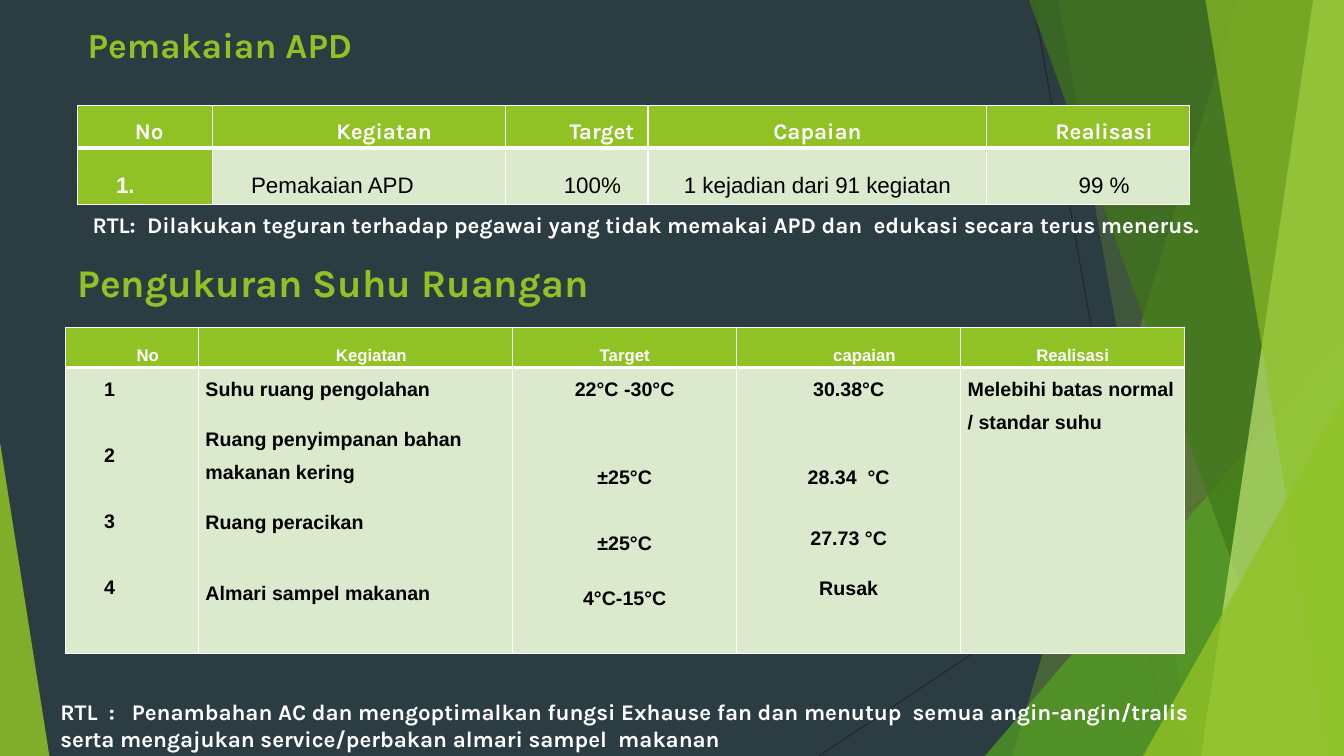
from dataclasses import dataclass
from typing import Any

import pptx
import pptx.dml.color
import pptx.enum.shapes
import pptx.enum.text
import pptx.oxml
import pptx.oxml.ns
import pptx.util

Pt = pptx.util.Pt
RGBColor = pptx.dml.color.RGBColor
Align = pptx.enum.text.PP_ALIGN
LEFT, MID = Align.LEFT, Align.CENTER

DARK = RGBColor(0x2C, 0x3C, 0x43)
LINE = RGBColor(0x26, 0x26, 0x26)
LIME = RGBColor(0x90, 0xC2, 0x26)
LEAF = RGBColor(0x54, 0xA0, 0x21)
MOSS = RGBColor(0x3F, 0x78, 0x19)
PALE = RGBColor(0xC0, 0xE4, 0x74)
MINT = RGBColor(0xDB, 0xE9, 0xCD)
WHITE = RGBColor(0xFF, 0xFF, 0xFF)
BLACK = RGBColor(0, 0, 0)

WIDE, HIGH = 960, 540


@dataclass
class Band:
    """Panel from a slanted left edge to the right side of the slide."""
    top: float
    foot: float
    color: RGBColor
    alpha: int


@dataclass
class Wedge:
    """Right triangle standing on the bottom of the slide."""
    left: float
    top: float
    width: float
    apex: float
    color: RGBColor
    alpha: int


@dataclass
class Font:
    name: str
    size: float
    color: RGBColor
    bold: bool = True


@dataclass
class Cell:
    """Table cell; gaps holds the space before each later paragraph."""
    lines: list[str]
    font: Font
    fill: RGBColor
    space: float
    align: Align = MID
    indent: float = 0
    gaps: tuple[float, ...] = ()


@dataclass
class Grid:
    left: float
    top: float
    cols: list[float]
    rows: list[float]
    cells: list[list[Cell]]


@dataclass
class Label:
    text: str
    left: float
    top: float
    width: float
    height: float
    font: Font


HEAD = Font("Karla", 16, WHITE)
NOTE = Font("Karla", 16, WHITE)
CELL = Font("Arial", 16, BLACK, False)
SMALL = Font("Arial", 12, WHITE)
BODY = Font("Arial", 14, BLACK)

DECOR = [
    Band(884, 723, LIME, 30),
    Band(756, 852, LIME, 20),
    Wedge(703.5, 240, 256.5, 1, LEAF, 72),
    Band(735, 929.5, MOSS, 70),
    Band(938, 858, PALE, 70),
    Band(861, 949, LIME, 65),
    Wedge(816.5, 283, 143.5, 1, LIME, 80),
    Wedge(0, 316, 35.3, 0, LIME, 85),
]
RULES = [(738, 0, 834, HIGH), (WIDE, 290, 585, HIGH)]

TITLE = Label("Pemakaian APD", 55.4, 13, 677, 30, Font("Karla", 25.2, LIME))
LABELS = [
    Label("Pengukuran Suhu Ruangan", 48.2, 180.7, 677, 40, Font("Karla", 28, LIME)),
    Label("RTL:  Dilakukan teguran terhadap pegawai yang tidak memakai APD dan  "
          "edukasi secara terus menerus.", 59, 147.6, 854, 46, NOTE),
    Label("RTL  :   Penambahan AC dan mengoptimalkan fungsi Exhause fan dan menutup  "
          "semua angin-angin/tralis  serta mengajukan service/perbakan almari sampel  "
          "makanan", 36, 495.4, 854, 46, NOTE),
]

GEAR = Grid(55.4, 75.6, [96.5, 209, 102, 242, 145], [30.2, 40.3], [
    [Cell(["No"], HEAD, LIME, 1.5, LEFT, 36),
     Cell(["Kegiatan"], HEAD, LIME, 1.5, MID, 36),
     Cell(["Target"], HEAD, LIME, 1.5, MID, 36),
     Cell(["Capaian"], HEAD, LIME, 1.5),
     Cell(["Realisasi"], HEAD, LIME, 1.5, MID, 22.5)],
    [Cell(["1."], Font("Arial", 16, WHITE), LIME, 2, LEFT, 22.5),
     Cell(["Pemakaian APD"], CELL, MINT, 2, LEFT, 22.5),
     Cell(["100%"], CELL, MINT, 2, MID, 22.5),
     Cell(["1 kejadian dari 91 kegiatan"], CELL, MINT, 2),
     Cell(["99 %"], CELL, MINT, 2, MID, 22.5)],
])
HEAT = Grid(46.8, 234, [95, 224.5, 160, 160, 160], [28.6, 204.5], [
    [Cell([text], SMALL, LIME, 2, MID, indent) for text, indent in (
        ("No", 22.5), ("Kegiatan", 22.5), ("Target", 0), ("capaian", 22.5),
        ("Realisasi", 0))],
    [Cell(["1", "2", "3", "4"], BODY, MINT, 1.5, LEFT, 22.5, (23.6, 23.6, 23.6)),
     Cell(["Suhu ruang pengolahan", "Ruang penyimpanan bahan makanan kering",
           "Ruang peracikan", "Almari sampel makanan"],
          BODY, MINT, 1.5, LEFT, 0, (12, 12, 27.8)),
     Cell(["22°C -30°C", "±25°C", "±25°C", "4°C-15°C"],
          BODY, MINT, 1.5, MID, 0, (39.3, 23.6, 15.7)),
     Cell(["30.38°C", "28.34  °C", "27.73 °C", "Rusak"],
          BODY, MINT, 1.5, MID, 0, (39.3, 20, 12)),
     Cell(["Melebihi batas normal / standar suhu"], BODY, MINT, 1.5, LEFT)],
])


def apply(item: Any, form: dict[str, Any]) -> None:
    for key, value in form.items():
        setattr(item, key, value)


def write(para: Any, text: str, font: Font) -> None:
    run = para.add_run()
    run.text = text
    apply(run.font, {"name": font.name, "size": Pt(font.size), "bold": font.bold})
    run.font.color.rgb = font.color


def tint(shape: Any, color: RGBColor, alpha: int) -> None:
    shape.shadow.inherit = False
    shape.line.fill.background()
    shape.fill.solid()
    shape.fill.fore_color.rgb = color
    node = shape.fill._xPr.find(".//" + pptx.oxml.ns.qn("a:srgbClr"))
    mark = pptx.oxml.parse_xml(
        f'<a:alpha {pptx.oxml.ns.nsdecls("a")} val="{alpha * 1000}"/>')
    node.append(mark)


def draw_decor(shapes: Any, part: Band | Wedge) -> None:
    if isinstance(part, Band):
        pen = shapes.build_freeform(part.top, 0, scale=Pt(1))
        pen.add_line_segments([(WIDE, 0), (WIDE, HIGH), (part.foot, HIGH)], close=True)
        shape = pen.convert_to_shape()
    else:
        shape = shapes.add_shape(
            pptx.enum.shapes.MSO_SHAPE.ISOSCELES_TRIANGLE, Pt(part.left), Pt(part.top),
            Pt(part.width), Pt(HIGH - part.top))
        shape.adjustments[0] = part.apex
    tint(shape, part.color, part.alpha)


def draw_rule(shapes: Any, ends: tuple[float, ...]) -> None:
    rule = shapes.add_connector(
        pptx.enum.shapes.MSO_CONNECTOR.STRAIGHT, *(Pt(end) for end in ends))
    rule.line.width = Pt(0.75)
    rule.line.color.rgb = LINE
    rule._element.spPr.append(
        pptx.oxml.parse_xml(f'<a:effectLst {pptx.oxml.ns.nsdecls("a")}/>'))


def fill_label(box: Any, label: Label) -> None:
    apply(box, {"left": Pt(label.left), "top": Pt(label.top),
                "width": Pt(label.width), "height": Pt(label.height)})
    apply(box.text_frame, {"word_wrap": True,
                           "auto_size": pptx.enum.text.MSO_AUTO_SIZE.NONE,
                           "vertical_anchor": pptx.enum.text.MSO_ANCHOR.TOP})
    para = box.text_frame.paragraphs[0]
    para.alignment = LEFT
    write(para, label.text, label.font)


def edge(cell: Any, widths: dict[str, float]) -> None:
    """Put white borders on a cell, ahead of its fill."""
    props = cell._tc.get_or_add_tcPr()
    for spot, (side, width) in enumerate(widths.items()):
        props.insert(spot, pptx.oxml.parse_xml(
            f'<a:ln{side} {pptx.oxml.ns.nsdecls("a")} w="{Pt(width)}">'
            f'<a:solidFill><a:srgbClr val="{WHITE}"/></a:solidFill></a:ln{side}>'))


def fill_cell(cell: Any, data: Cell, head: bool) -> None:
    apply(cell, {"margin_left": Pt(5), "margin_right": Pt(5),
                 "margin_top": 0, "margin_bottom": 0})
    cell.fill.solid()
    cell.fill.fore_color.rgb = data.fill
    edge(cell, {"L": 1, "R": 1, "T": 1 if head else 3, "B": 3 if head else 1})
    frame = cell.text_frame
    for spot, text in enumerate(data.lines):
        para = frame.add_paragraph() if spot else frame.paragraphs[0]
        apply(para, {"alignment": data.align, "line_spacing": data.space,
                     "space_before": Pt(data.gaps[spot - 1] if spot else 0)})
        para._p.get_or_add_pPr().set("marL", str(Pt(data.indent)))
        write(para, text, data.font)


def draw_grid(shapes: Any, grid: Grid) -> None:
    table = shapes.add_table(
        len(grid.rows), len(grid.cols), Pt(grid.left), Pt(grid.top),
        Pt(sum(grid.cols)), Pt(sum(grid.rows))).table
    table.horz_banding = False
    for col, width in zip(table.columns, grid.cols):
        col.width = Pt(width)
    for row, height, cells in zip(table.rows, grid.rows, grid.cells):
        row.height = Pt(height)
        for cell, data in zip(row.cells, cells):
            fill_cell(cell, data, cells is grid.cells[0])


def main() -> None:
    deck = pptx.Presentation()
    apply(deck, {"slide_width": Pt(WIDE), "slide_height": Pt(HIGH)})
    slide = deck.slides.add_slide(deck.slide_layouts[5])
    slide.background.fill.solid()
    slide.background.fill.fore_color.rgb = DARK
    shapes = slide.shapes
    for ends in RULES:
        draw_rule(shapes, ends)
    for part in DECOR:
        draw_decor(shapes, part)
    fill_label(shapes.title, TITLE)
    draw_grid(shapes, GEAR)
    for label in LABELS:
        fill_label(shapes.add_textbox(0, 0, 0, 0), label)
    draw_grid(shapes, HEAT)
    deck.save("out.pptx")


if __name__ == "__main__":
    main()
